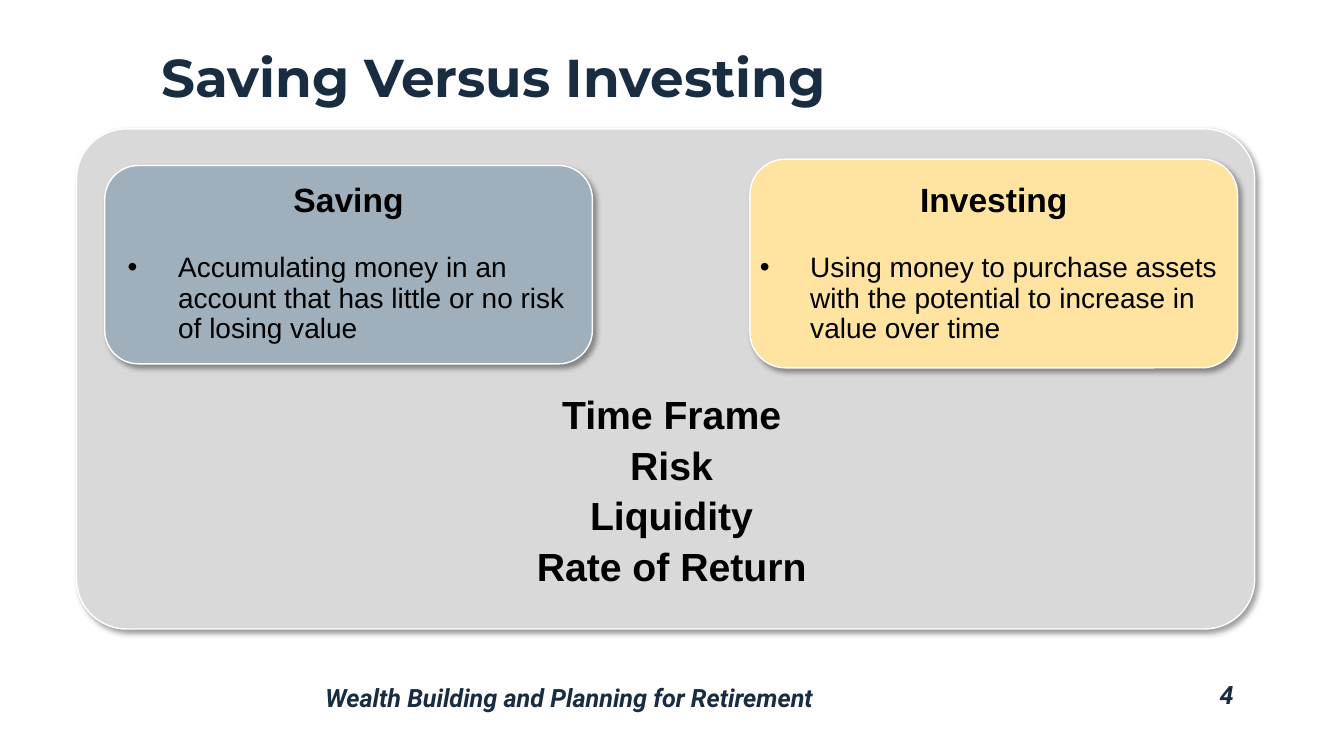
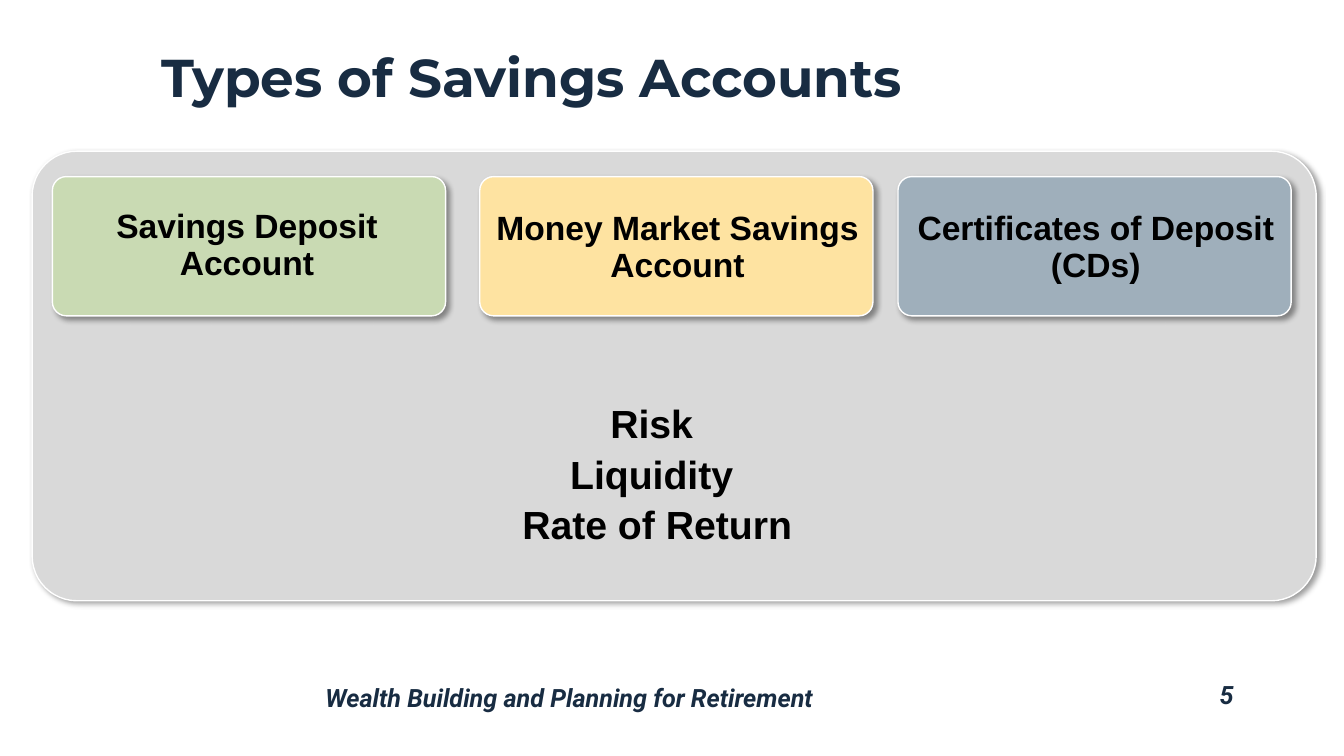
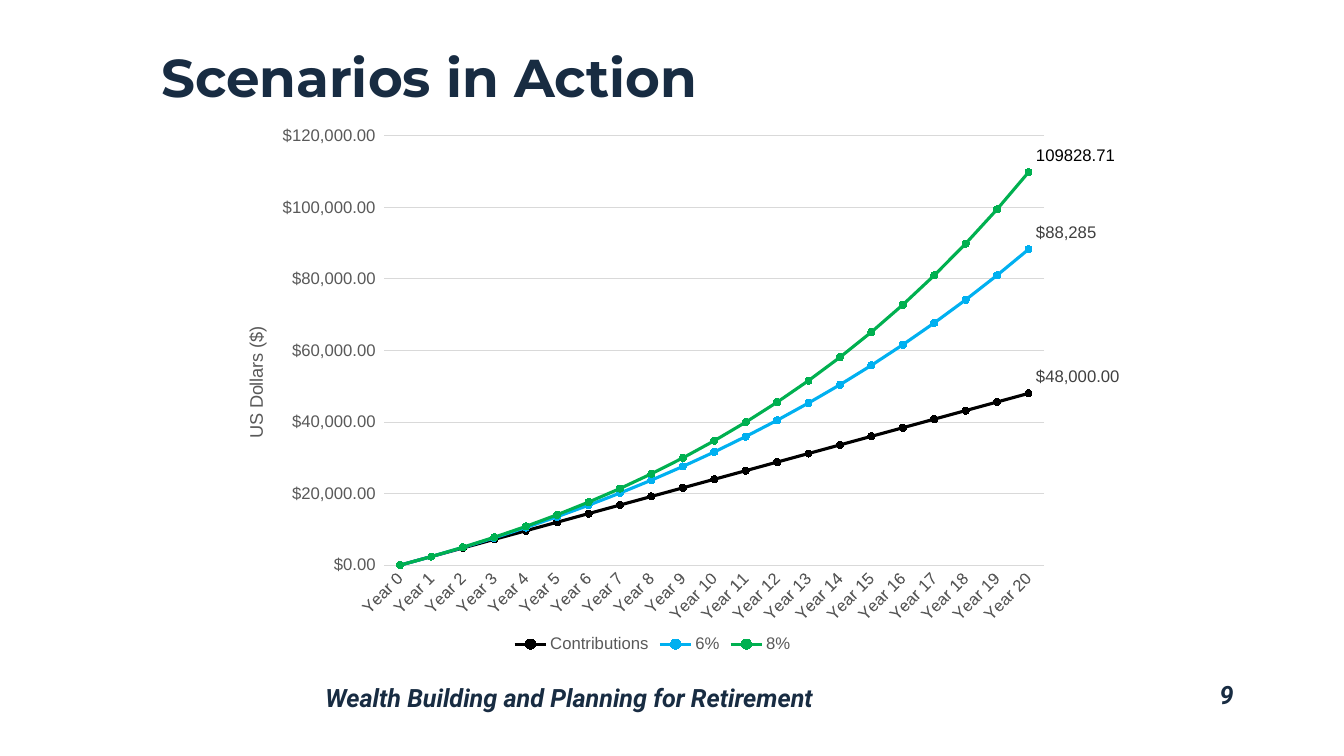
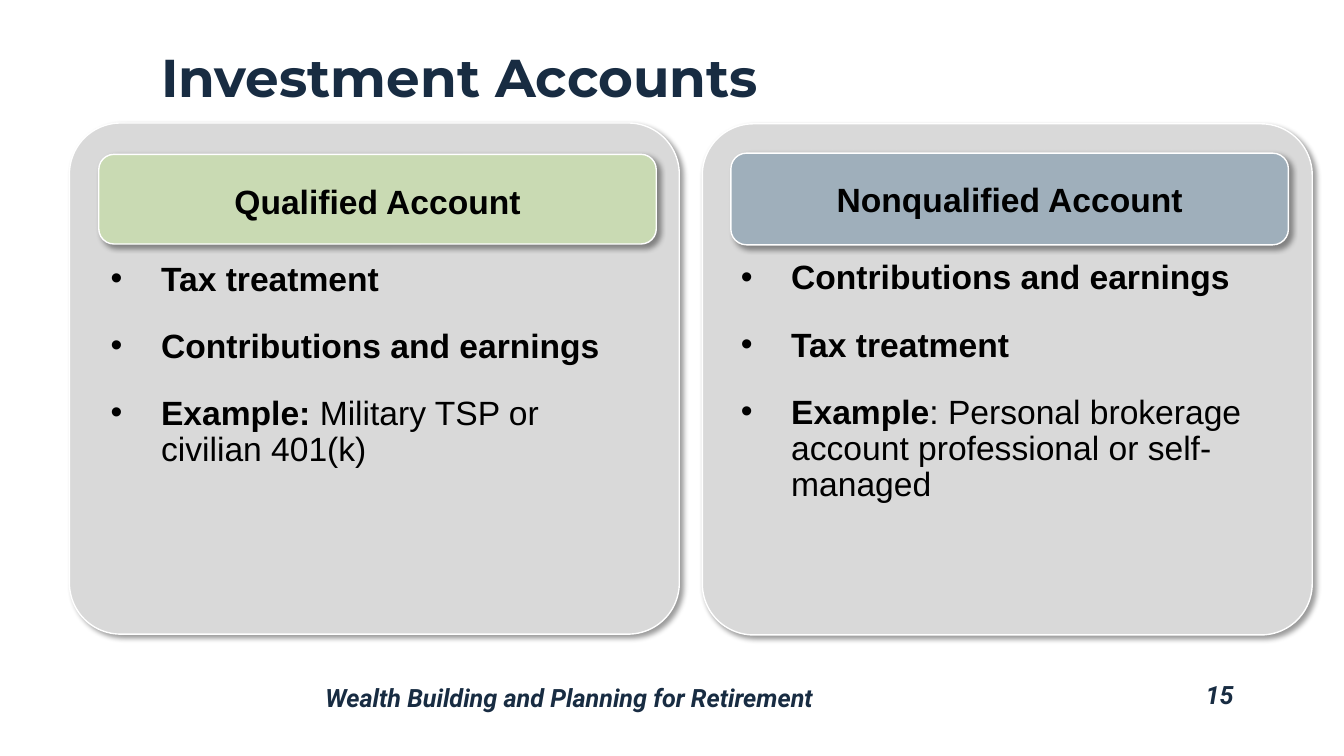
"""Build four slides on saving and investing for retirement."""
from dataclasses import dataclass
from typing import NamedTuple, Optional, Sequence, Union

from lxml.etree import SubElement
from pptx import Presentation
from pptx.chart.data import CategoryChartData
from pptx.dml.color import RGBColor
from pptx.enum.chart import XL_CHART_TYPE as ChartType
from pptx.enum.chart import XL_LABEL_POSITION as LabelPosition
from pptx.enum.chart import XL_LEGEND_POSITION as LegendPosition
from pptx.enum.chart import XL_MARKER_STYLE as MarkerStyle
from pptx.enum.chart import XL_TICK_MARK as TickMark
from pptx.enum.shapes import MSO_SHAPE as Preset
from pptx.enum.text import MSO_ANCHOR as Anchor
from pptx.enum.text import PP_ALIGN as Align
from pptx.oxml.ns import qn
from pptx.util import Cm, Pt


@dataclass(frozen=True)
class Theme:
    """Colours, fonts and type sizes of the deck."""
    navy: str = "182C42"
    black: str = "000000"
    white: str = "FFFFFF"
    panel: str = "D9D9D9"
    slate: str = "9FAFBB"
    yellow: str = "FEE3A1"
    green: str = "C9DAB3"
    axis_text: str = "595959"
    label_text: str = "404040"
    blue_line: str = "00B0F0"
    green_line: str = "00B050"
    title_font: str = "Montserrat"
    footer_font: str = "Roboto"
    body_font: str = "Arial"
    title: int = 38
    topic: int = 28
    heading: int = 24
    body: int = 20
    footer: int = 18
    axis_title: int = 13
    chart: int = 12


THEME = Theme()


class Area(NamedTuple):
    """A rectangle in centimetres."""
    left: float
    top: float
    width: float
    height: float

    def lengths(self) -> list:
        """Return the four sides as lengths."""
        return [Cm(side) for side in self]


class Span(NamedTuple):
    """A piece of a line with its own weight."""
    text: str
    bold: bool


class Card(NamedTuple):
    """A coloured card and the heading laid over it."""
    heading: str
    fill: str
    frame: Area
    heading_area: Area


class Curve(NamedTuple):
    """A chart series, its yearly growth and its end label."""
    name: str
    rate: float
    color: str
    label_color: str
    label_format: str


Line = Union[str, Sequence[Span]]

FOOTER = "Wealth Building and Planning for Retirement"
TITLE_AREA = Area(3.81, 0.28, 27.53, 2.59)
FOOTER_AREA = Area(7.95, 17.15, 19.38, 0.97)
NUMBER_AREA = Area(27.33, 17.07, 4.01, 0.97)
SMALL_CORNER, LARGE_CORNER = 0.1, 0.17

YEARS = 20
YEARLY_DEPOSIT = 2400
CURVES = [
    Curve("Contributions", 0, THEME.black, THEME.label_text, '"$"#,##0.00'),
    Curve("6%", 0.06, THEME.blue_line, THEME.label_text, '"$"#,##0'),
    Curve("8%", 0.08, THEME.green_line, THEME.black, "General"),
]


def rgb(color: str) -> RGBColor:
    """Turn a hex string into a colour."""
    return RGBColor.from_string(color)


def style_font(font, size: float, color: str, name: str = THEME.body_font,
               bold: bool = False, italic: bool = False) -> None:
    """Set every property of a font."""
    font.name, font.size = name, Pt(size)
    font.bold, font.italic = bold, italic
    font.color.rgb = rgb(color)


def write(page, area: Area, lines: Sequence[Line], *, size: int,
          font: str = THEME.body_font, color: str = THEME.black,
          bold: bool = False, italic: bool = False, align=Align.LEFT,
          anchor=Anchor.TOP, bullet: bool = False, before: int = 0,
          after: int = 0) -> None:
    """Add a text box with one paragraph per line."""
    frame = page.shapes.add_textbox(*area.lengths()).text_frame
    frame.word_wrap, frame.vertical_anchor = True, anchor
    for index, line in enumerate(lines):
        para = frame.add_paragraph() if index else frame.paragraphs[0]
        para.alignment, para.line_spacing = align, 0.9
        para.space_before = Pt(before if index else 0)
        para.space_after = Pt(after)
        if bullet:
            props = para._p.get_or_add_pPr()
            props.set("marL", str(Cm(1.27)))
            props.set("indent", str(-Cm(1.27)))
            SubElement(props, qn("a:buFont"), typeface="Arial")
            SubElement(props, qn("a:buChar"), char="•")
        spans = [Span(line, bold)] if isinstance(line, str) else line
        for span in spans:
            run = para.add_run()
            run.text = span.text
            style_font(run.font, size, color, font, span.bold, italic)


def add_panel(page, area: Area, fill: str, corner: float) -> None:
    """Add a rounded panel with a white edge and a soft shadow."""
    panel = page.shapes.add_shape(Preset.ROUNDED_RECTANGLE, *area.lengths())
    panel.adjustments[0] = corner
    panel.fill.solid()
    panel.fill.fore_color.rgb = rgb(fill)
    panel.line.color.rgb = rgb(THEME.white)
    panel.line.width = Pt(1)
    panel.shadow.inherit = False
    effects = panel._element.spPr.find(qn("a:effectLst"))
    shadow = SubElement(effects, qn("a:outerShdw"), blurRad=str(Pt(4)),
                        dist=str(Pt(3)), dir="2700000", algn="tl", rotWithShape="0")
    tint = SubElement(shadow, qn("a:srgbClr"), val=THEME.black)
    SubElement(tint, qn("a:alpha"), val="40000")


def add_card(page, card: Card, corner: float) -> None:
    """Add a card and its centred heading."""
    add_panel(page, card.frame, card.fill, corner)
    write(page, card.heading_area, [card.heading], size=THEME.heading,
          bold=True, align=Align.CENTER, anchor=Anchor.MIDDLE)


def add_topics(page, area: Area, topics: Sequence[str]) -> None:
    """Add a centred list of topics."""
    write(page, area, topics, size=THEME.topic, bold=True, align=Align.CENTER,
          anchor=Anchor.MIDDLE, after=6)


def add_page(deck, title: str, number: int):
    """Add a blank page with title, footer and page number."""
    page = deck.slides.add_slide(deck.slide_layouts[6])
    write(page, TITLE_AREA, [title], size=THEME.title, font=THEME.title_font,
          color=THEME.navy, bold=True, anchor=Anchor.BOTTOM)
    for area, text, align in ((FOOTER_AREA, FOOTER, Align.LEFT),
                              (NUMBER_AREA, str(number), Align.RIGHT)):
        write(page, area, [text], size=THEME.footer, font=THEME.footer_font,
              color=THEME.navy, bold=True, italic=True, align=align)
    return page


def place(element, index: int, edge: bool = True, inner: bool = False,
          **fractions: float) -> None:
    """Give a chart part a manual layout in fractions of the chart."""
    old = element.find(qn("c:layout"))
    if old is not None:
        element.remove(old)
    layout = SubElement(element, qn("c:layout"))
    element.insert(index, layout)
    manual = SubElement(layout, qn("c:manualLayout"))
    if inner:
        SubElement(manual, qn("c:layoutTarget"), val="inner")
    if edge:
        for mode in ("xMode", "yMode"):
            SubElement(manual, qn(f"c:{mode}"), val="edge")
    for name, value in fractions.items():
        SubElement(manual, qn(f"c:{name}"), val=str(value))


def balances(rate: float) -> list:
    """Return the balance at each year's end for a growth rate."""
    amounts = [0.0]
    for _ in range(YEARS):
        amounts.append(amounts[-1] * (1 + rate) + YEARLY_DEPOSIT)
    return [round(amount, 2) for amount in amounts]


def style_series(series, curve: Curve) -> None:
    """Colour a series and label its last point."""
    series.smooth = False
    series.format.line.color.rgb = rgb(curve.color)
    series.format.line.width = Pt(2.25)
    series.marker.style, series.marker.size = MarkerStyle.CIRCLE, 5
    series.marker.format.fill.solid()
    series.marker.format.fill.fore_color.rgb = rgb(curve.color)
    series.marker.format.line.color.rgb = rgb(curve.color)
    series.data_labels.show_value = False
    label = series.points[YEARS].data_label
    style_font(label.font, THEME.chart, curve.label_color)
    label.position = LabelPosition.RIGHT
    for leader in series._element.iter(qn("c:showLeaderLines")):
        leader.set("val", "0")
    element = next(series._element.iter(qn("c:dLbl")))
    place(element, 1, edge=False, x=0, y=-0.03)
    number = SubElement(element, qn("c:numFmt"),
                        formatCode=curve.label_format, sourceLinked="0")
    element.insert(2, number)


def add_growth_chart(page, area: Area) -> None:
    """Add the line chart of balances over the years."""
    data = CategoryChartData()
    data.categories = [f"Year {year}" for year in range(YEARS + 1)]
    for curve in CURVES:
        data.add_series(curve.name, balances(curve.rate))
    chart = page.shapes.add_chart(ChartType.LINE_MARKERS, *area.lengths(), data).chart
    chart.has_title = False
    style_font(chart.font, THEME.chart, THEME.axis_text)
    chart.plots[0].vary_by_categories = False
    for series, curve in zip(chart.plots[0].series, CURVES):
        style_series(series, curve)

    years, dollars = chart.category_axis, chart.value_axis
    for axis in (years, dollars):
        axis.major_tick_mark = axis.minor_tick_mark = TickMark.NONE
        style_font(axis.tick_labels.font, THEME.chart, THEME.axis_text)
    years.format.line.color.rgb = rgb(THEME.panel)
    years.format.line.width = Pt(0.75)
    years._element.find(qn("c:txPr")).find(qn("a:bodyPr")).set("rot", "-2700000")

    dollars.minimum_scale, dollars.maximum_scale = 0, 120000
    dollars.major_unit = 20000
    dollars.format.line.fill.background()
    dollars.major_gridlines.format.line.color.rgb = rgb(THEME.panel)
    dollars.major_gridlines.format.line.width = Pt(0.75)
    dollars.tick_labels.number_format = '"$"#,##0.00_);[Red]\\("$"#,##0.00\\)'
    dollars.tick_labels.number_format_is_linked = False
    title = dollars.axis_title.text_frame
    title.text = "US Dollars ($)"
    style_font(title.paragraphs[0].runs[0].font, THEME.axis_title, THEME.axis_text)
    title._txBody.find(qn("a:bodyPr")).set("rot", "-5400000")
    place(dollars.axis_title._element, 1, x=0.02, y=0.38)

    chart.has_legend = True
    chart.legend.position = LegendPosition.BOTTOM
    chart.legend.include_in_layout = False
    style_font(chart.legend.font, THEME.chart, THEME.axis_text)
    place(chart.legend._element, 1, x=0.32, y=0.94)
    plot_area = next(chart._chartSpace.iter(qn("c:plotArea")))
    place(plot_area, 0, inner=True, x=0.18, y=0.04, w=0.74, h=0.78)


def build_comparison(deck) -> None:
    """Build the slide that sets saving against investing."""
    page = add_page(deck, "Saving Versus Investing", 4)
    add_panel(page, Area(1.93, 3.25, 29.69, 12.6), THEME.panel, SMALL_CORNER)
    sides = [
        (Card("Saving", THEME.slate, Area(2.64, 4.17, 12.29, 5),
              Area(2.64, 3.91, 12.29, 2.34)),
         Area(2.97, 6.27, 12.01, 2.69),
         "Accumulating money in an account that has little or no risk of losing value"),
        (Card("Investing", THEME.yellow, Area(18.9, 4.01, 12.29, 5.26),
              Area(18.9, 3.91, 12.29, 2.34)),
         Area(18.9, 6.27, 12.29, 2.69),
         "Using money to purchase assets with the potential to increase in value over time"),
    ]
    for card, area, meaning in sides:
        add_card(page, card, LARGE_CORNER)
        write(page, area, [meaning], size=THEME.body, bullet=True)
    add_topics(page, Area(12.85, 9.7, 8.15, 5.44),
               ["Time Frame", "Risk", "Liquidity", "Rate of Return"])


def build_savings(deck) -> None:
    """Build the slide on savings accounts."""
    page = add_page(deck, "Types of Savings Accounts", 5)
    add_panel(page, Area(0.81, 3.81, 32.36, 11.33), THEME.panel, SMALL_CORNER)
    accounts = [
        ("Savings Deposit Account", THEME.green, 1.32, 1.27, 4.45),
        ("Money Market Savings Account", THEME.yellow, 12.09, 12.12, 4.5),
        ("Certificates of Deposit (CDs)", THEME.slate, 22.63, 22.66, 4.5),
    ]
    for name, fill, left, text_left, text_top in accounts:
        card = Card(name, fill, Area(left, 4.45, 9.91, 3.51),
                    Area(text_left, text_top, 9.91, 3.51))
        add_card(page, card, SMALL_CORNER)
    add_topics(page, Area(9.27, 9.4, 14.58, 5.21),
               ["Risk ", "Liquidity ", "Rate of Return"])


def build_scenarios(deck) -> None:
    """Build the slide with the growth chart."""
    page = add_page(deck, "Scenarios in Action", 9)
    add_growth_chart(page, Area(5.64, 2.87, 22.58, 13.87))


def build_investments(deck) -> None:
    """Build the slide on investment accounts."""
    page = add_page(deck, "Investment Accounts", 15)
    taxes, earnings = "Tax treatment", "Contributions and earnings"
    columns = [
        (Area(1.75, 3.1, 15.37, 12.88),
         Card("Qualified Account", THEME.green, Area(2.49, 3.89, 14.05, 2.26),
              Area(2.49, 3.96, 14.05, 2.34)),
         Area(2.54, 6.48, 14, 9.86),
         [taxes, earnings,
          [Span("Example:", True), Span(" Military TSP or civilian 401(k)", False)]]),
        (Area(17.7, 3.12, 15.37, 12.88),
         Card("Nonqualified Account", THEME.slate, Area(18.42, 3.86, 14.05, 2.31),
              Area(18.42, 3.91, 14.05, 2.36)),
         Area(18.42, 6.45, 14.05, 10.19),
         [earnings, taxes,
          [Span("Example", True),
           Span(": Personal brokerage account professional or self-managed", False)]]),
    ]
    for panel, card, area, lines in columns:
        add_panel(page, panel, THEME.panel, SMALL_CORNER)
        add_card(page, card, LARGE_CORNER)
        write(page, area, lines, size=THEME.heading, bold=True, bullet=True,
              before=10, after=12)


def main() -> None:
    """Build and save the deck."""
    deck = Presentation()
    deck.slide_width, deck.slide_height = Cm(33.87), Cm(19.05)
    for build in (build_comparison, build_savings, build_scenarios, build_investments):
        build(deck)
    deck.save("out.pptx")


if __name__ == "__main__":
    main()
